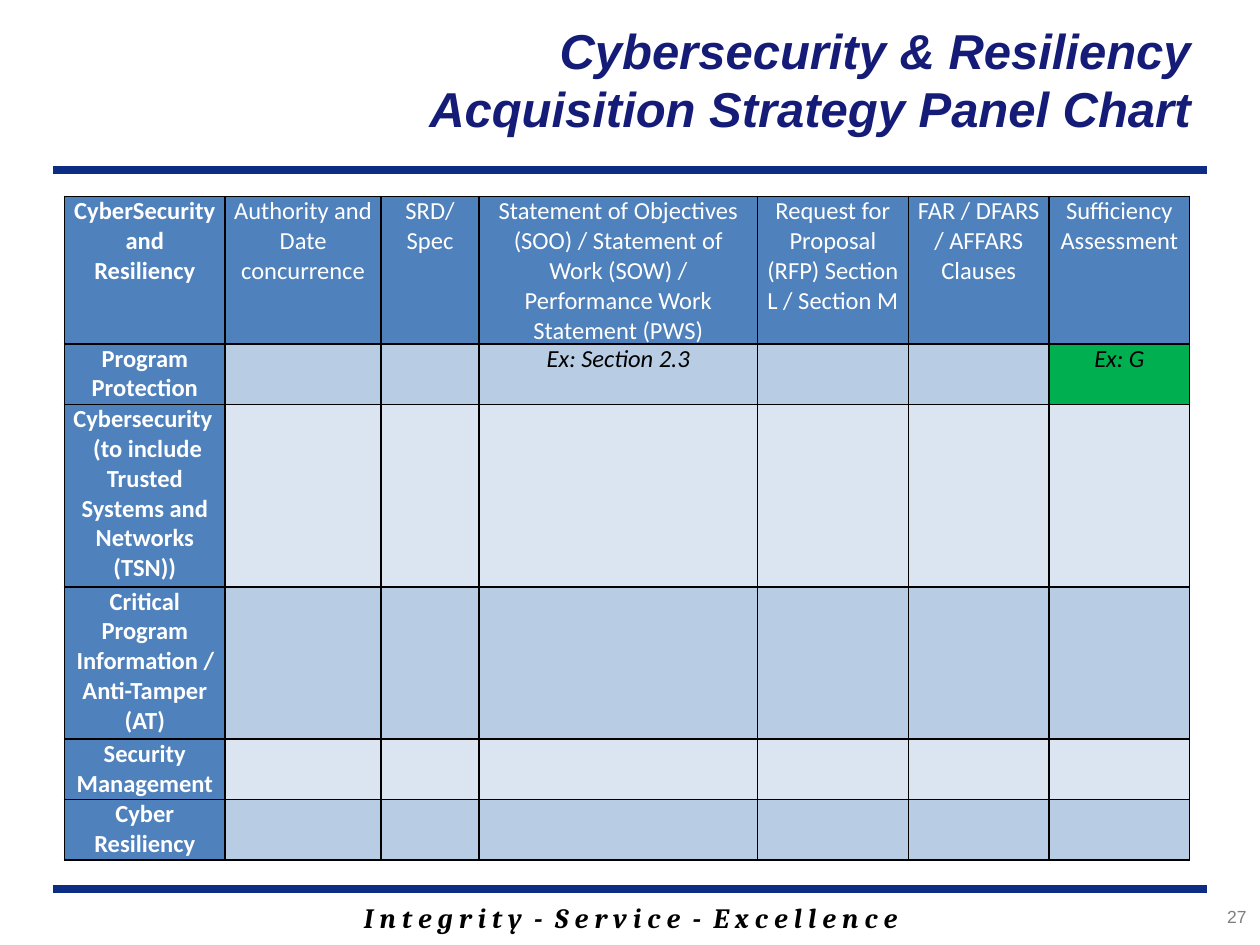
from lxml.etree import SubElement
from pptx import Presentation
from pptx.dml.color import RGBColor as RGB
from pptx.enum.shapes import MSO_CONNECTOR as CONNECTOR
from pptx.enum.text import MSO_ANCHOR as ANCHOR, PP_ALIGN as ALIGN
from pptx.oxml.ns import qn
from pptx.util import Cm, Pt

COLORS = {
    "rule": "0C2D83", "title": "151C77", "header": "4F81BD",
    "dark band": "B8CCE4", "light band": "DBE5F1", "good": "00B050",
    "white": "FFFFFF", "black": "000000", "number": "7F7F7F",
}
COLUMN_WIDTHS = [3.24, 3.14, 1.98, 5.61, 3.04, 2.84, 2.83]
ROW_HEIGHTS = [2.97, 1.22, 3.68, 3.07, 1.22, 1.22]
HEADINGS = [
    "CyberSecurity and Resiliency",
    "Authority and Date concurrence",
    "SRD/ Spec",
    "Statement of Objectives (SOO) / Statement of Work (SOW) / "
    "Performance Work Statement (PWS)",
    "Request for Proposal (RFP) Section L / Section M",
    "FAR / DFARS / AFFARS Clauses",
    "Sufficiency Assessment",
]
TOPICS = [
    "Program Protection",
    "Cybersecurity\n (to include Trusted Systems and Networks (TSN))",
    "Critical Program Information /Anti-Tamper (AT)",
    "Security Management",
    "Cyber Resiliency",
]
EXAMPLES = {(1, 3): "Ex: Section 2.3", (1, 6): "Ex: G"}


def color(name):
    return RGB.from_string(COLORS[name])


def style(frame, align, font, size, ink, bold=False, italic=False):
    for paragraph in frame.paragraphs:
        paragraph.alignment = align
        for run in paragraph.runs:
            run.font.name, run.font.size = font, Pt(size)
            run.font.bold, run.font.italic = bold, italic
            run.font.color.rgb = color(ink)


def add_text(slide, box, text, align, anchor=ANCHOR.TOP, **look):
    frame = slide.shapes.add_textbox(*map(Cm, box)).text_frame
    frame.word_wrap = True
    frame.vertical_anchor = anchor
    frame.text = text
    style(frame, align, **look)


def add_rule(slide, left, top, width):
    rule = slide.shapes.add_connector(
        CONNECTOR.STRAIGHT, Cm(left), Cm(top), Cm(left + width), Cm(top))
    rule.line.color.rgb = color("rule")
    rule.line.width = Pt(4.5)
    SubElement(rule._element.spPr, qn("a:effectLst"))


def add_borders(cell):
    properties = cell._tc.get_or_add_tcPr()
    for position, side in enumerate(("lnL", "lnR", "lnT", "lnB")):
        border = SubElement(properties, qn(f"a:{side}"), w=str(Pt(1)))
        fill = SubElement(border, qn("a:solidFill"))
        SubElement(fill, qn("a:srgbClr"), val=COLORS["black"])
        properties.insert(position, border)  # borders precede the fill


def add_header(slide, left, top, width):
    add_text(slide, (left + 6.48, top, width - 6.56, 3.18),
             "Cybersecurity & Resiliency Acquisition Strategy Panel Chart",
             ALIGN.RIGHT, ANCHOR.MIDDLE, font="Arial", size=28, ink="title",
             bold=True, italic=True)
    add_rule(slide, left, top + 3.43, width)


def add_panel_table(slide, left, top):
    table = slide.shapes.add_table(
        len(ROW_HEIGHTS), len(COLUMN_WIDTHS), Cm(left), Cm(top),
        Cm(sum(COLUMN_WIDTHS)), Cm(sum(ROW_HEIGHTS))).table
    for column, width in zip(table.columns, COLUMN_WIDTHS):
        column.width = Cm(width)
    for row, height in zip(table.rows, ROW_HEIGHTS):
        row.height = Cm(height)

    for r in range(len(ROW_HEIGHTS)):
        for c in range(len(COLUMN_WIDTHS)):
            cell = table.cell(r, c)
            heading = r == 0 or c == 0
            cell.margin_left = cell.margin_right = Cm(0.18)
            cell.margin_top = cell.margin_bottom = 0
            if heading:
                band = "header"
            else:
                band = "dark band" if r % 2 else "light band"
            cell.fill.solid()
            cell.fill.fore_color.rgb = color(band)
            add_borders(cell)

            if r == 0:
                cell.text = HEADINGS[c]
            elif c == 0:
                cell.text = TOPICS[r - 1]
            else:
                cell.text = EXAMPLES.get((r, c), "")
            style(cell.text_frame, ALIGN.CENTER, "Calibri", 14,
                  "white" if heading else "black",
                  bold=c == 0, italic=not heading)

    # Exceptions: the rating colour and the left-aligned first line
    table.cell(1, 6).fill.fore_color.rgb = color("good")
    table.cell(2, 0).text_frame.paragraphs[0].alignment = ALIGN.LEFT


def add_footer(slide, left, top, width):
    add_rule(slide, left, top, width)
    add_text(slide, (left + 2.54, top + 0.1, 18.21, 0.94),
             "I n t e g r i t y  -  S e r v i c e  -  E x c e l l e n c e",
             ALIGN.CENTER, font="Cambria", size=16, ink="black",
             bold=True, italic=True)
    add_text(slide, (left + 21.13, top + 0.2, 3.18, 0.84), "27",
             ALIGN.RIGHT, font="Arial", size=10, ink="number")


def main():
    deck = Presentation()
    deck.slide_width, deck.slide_height = Cm(25.4), Cm(19.05)
    slide = deck.slides.add_slide(deck.slide_layouts[6])
    add_header(slide, 1.07, 0, 23.26)
    add_panel_table(slide, 1.3, 3.96)
    add_footer(slide, 1.07, 17.93, 23.26)
    deck.save("out.pptx")


if __name__ == "__main__":
    main()
